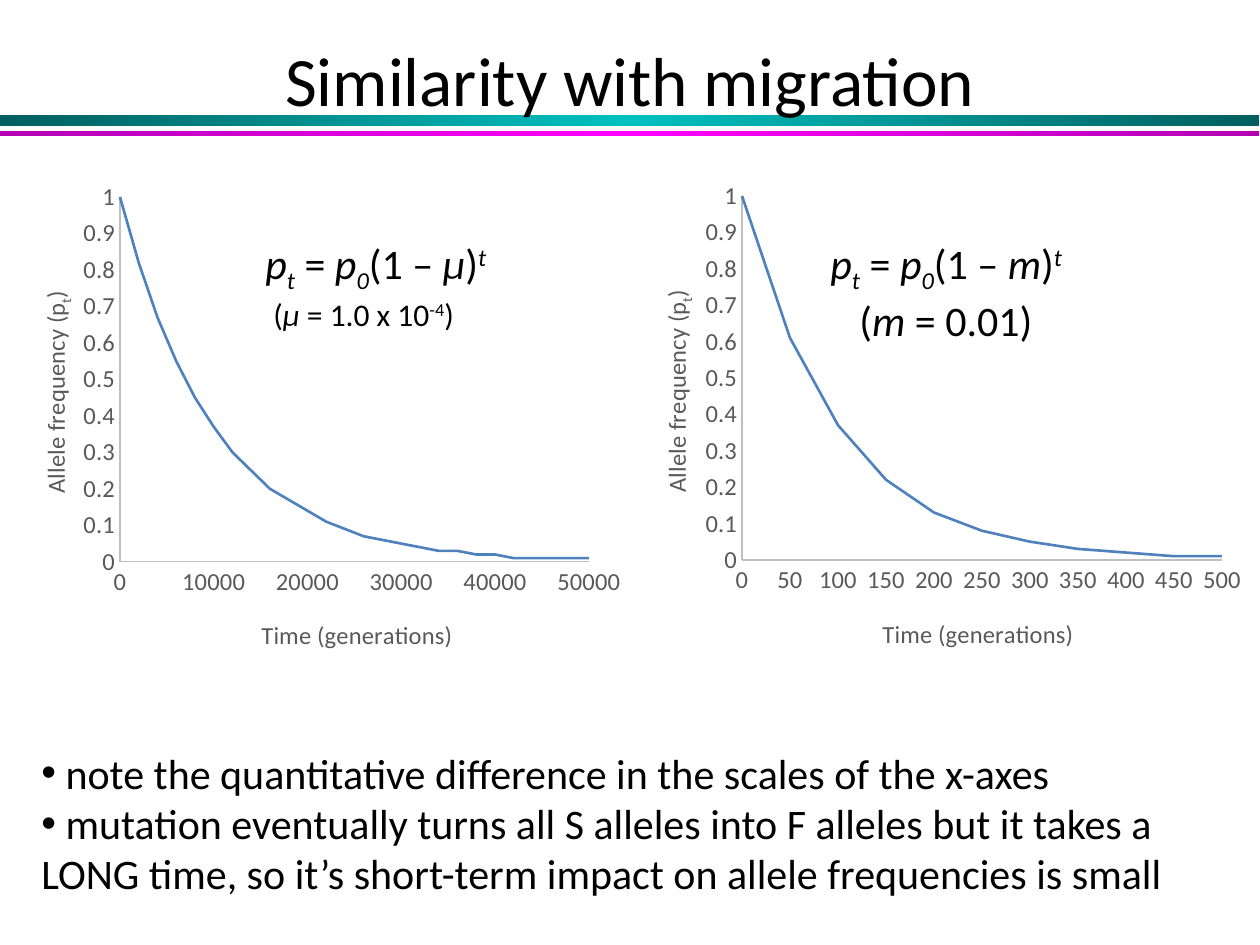
from lxml import etree
from pptx import Presentation
from pptx import util as u
from pptx.chart.data import XyChartData
from pptx.dml.color import RGBColor
from pptx.enum import chart as charts, shapes, text
from pptx.oxml.ns import qn

FONT = "Calibri"
BLACK, GREY, AXIS_GREY, CURVE_BLUE = "000000", "595959", "BFBFBF", "4F81BD"
color = RGBColor.from_string


def px(length):
    """Turn pixels (126 to the inch) into EMU."""
    return u.Emu(round(length * 914400 / 126))


def add_run(paragraph, words, size, hex_color=BLACK, italic=False, baseline=0):
    run = paragraph.add_run()
    run.text = words
    run.font.name = FONT
    run.font.size = u.Pt(size)
    run.font.bold = False
    run.font.italic = italic
    run.font.color.rgb = color(hex_color)
    if baseline:
        run.font._element.set("baseline", str(baseline * 1000))


presentation = Presentation()
presentation.slide_width, presentation.slide_height = px(1260), px(945)
slide = presentation.slides.add_slide(presentation.slide_layouts[5])

# Two bands under the title, brightest in the middle
for top, height, edge, middle in [(115, 11, "005F5F", "00C0C0"), (131, 5, "B200B2", "FF00FF")]:
    band = slide.shapes.add_shape(shapes.MSO_SHAPE.RECTANGLE, 0, px(top), px(1259), px(height))
    band.shadow.inherit = False
    band.line.fill.background()
    band.fill.gradient()
    band.fill.gradient_angle = 0
    stop_list = band.fill._fill._gradFill.find(qn("a:gsLst"))
    for stop in list(stop_list):
        stop_list.remove(stop)
    for position, stop_color in [(0, edge), (50000, middle), (100000, edge)]:
        stop = etree.SubElement(stop_list, qn("a:gs"), pos=str(position))
        etree.SubElement(stop, qn("a:srgbClr"), val=stop_color)

# Title, moved to the front of the bands
title = slide.shapes.title
title.left, title.top, title.width, title.height = px(63), px(38), px(1134), px(81)
title.text_frame.vertical_anchor = text.MSO_ANCHOR.MIDDLE
title.text_frame.paragraphs[0].alignment = text.PP_ALIGN.CENTER
add_run(title.text_frame.paragraphs[0], "Similarity with migration", 39.6)
slide.shapes._spTree.append(title._element)

# Decay charts: left, top, plot box, time step, points, rate, axis maximum, axis unit
chart_width, chart_height = 630, 501
decay_charts = [
    (3, 171, (120, 197, 469, 365), 2000, 27, 0.0001, 50000, 10000),
    (624, 170, (742, 196, 480, 364), 50, 11, 0.01, 500, 50),
]
for left, top, plot_box, step, points, rate, time_max, time_unit in decay_charts:
    data = XyChartData()
    series_data = data.add_series("Series 1")
    for time in range(0, step * points, step):
        series_data.add_data_point(time, round((1 - rate) ** time, 2))
    chart = slide.shapes.add_chart(
        charts.XL_CHART_TYPE.XY_SCATTER_SMOOTH_NO_MARKERS,
        px(left), px(top), px(chart_width), px(chart_height), data).chart
    chart.has_legend = False
    chart.has_title = False
    chart.font.name = FONT
    chart.font.size = u.Pt(14)
    chart.font.color.rgb = color(GREY)
    chart.plots[0].vary_by_categories = False
    curve = chart.plots[0].series[0]
    curve.smooth = True
    curve.marker.style = charts.XL_MARKER_STYLE.NONE
    curve.format.line.color.rgb = color(CURVE_BLUE)
    curve.format.line.width = u.Pt(1.5)

    time_axis, frequency_axis = chart.category_axis, chart.value_axis
    for axis, maximum, unit in [(time_axis, time_max, time_unit), (frequency_axis, 1, 0.1)]:
        axis.minimum_scale, axis.maximum_scale, axis.major_unit = 0, maximum, unit
        axis.has_major_gridlines = False
        axis.major_tick_mark = axis.minor_tick_mark = charts.XL_TICK_MARK.NONE
        axis.format.line.color.rgb = color(AXIS_GREY)
        axis.format.line.width = u.Pt(0.75)
        axis.has_title = True
    add_run(time_axis.axis_title.text_frame.paragraphs[0], "Time (generations)", 14, GREY)
    frequency_frame = frequency_axis.axis_title.text_frame
    frequency_frame._txBody.find(qn("a:bodyPr")).set("rot", "-5400000")
    for words, baseline in [("Allele frequency (p", 0), ("t", -25), (")", 0)]:
        add_run(frequency_frame.paragraphs[0], words, 14, GREY, baseline=baseline)

    plot_left, plot_top, plot_width, plot_height = plot_box
    placements = [
        (chart._chartSpace.chart.plotArea, 0, plot_box),
        (time_axis.axis_title._element, 1, (left + 254, top + 443)),
        (frequency_axis.axis_title._element, 1, (left + 32, top + 116)),
    ]
    for element, index, box in placements:
        for old_layout in element.findall(qn("c:layout")):
            element.remove(old_layout)
        layout = etree.Element(qn("c:layout"))
        element.insert(index, layout)
        manual = etree.SubElement(layout, qn("c:manualLayout"))
        if len(box) == 4:
            etree.SubElement(manual, qn("c:layoutTarget"), val="inner")
        for mode in ("xMode", "yMode"):
            etree.SubElement(manual, qn("c:" + mode), val="edge")
        offsets = (box[0] - left, box[1] - top) + tuple(box[2:])
        sizes = (chart_width, chart_height) * 2
        for name, offset, size in zip("xywh", offsets, sizes):
            etree.SubElement(manual, qn("c:" + name), val=str(round(offset / size, 4)))

# Equations: left, width, height, symbol, second line's indent, size and end
equations = [
    (253, 252, 102, "μ", 8, 18, [(" = 1.0 x 10", False, 0), ("-4", False, 30), (")", False, 0)]),
    (818, 285, 113, "m", 29, 24, [(" = 0.01)", False, 0)]),
]
for left, width, height, symbol, indent, size, ending in equations:
    frame = slide.shapes.add_textbox(px(left), px(231), px(width), px(height)).text_frame
    frame.word_wrap = False
    formula = [("p", True, 0), ("t", True, -25), (" = ", False, 0), ("p", True, 0),
               ("0", True, -25), ("(1 – ", False, 0), (symbol, True, 0),
               (")", False, 0), ("t", True, 30)]
    for words, italic, baseline in formula:
        add_run(frame.paragraphs[0], words, 24, italic=italic, baseline=baseline)
    rate_line = frame.add_paragraph()
    rate_line._p.get_or_add_pPr().set("marL", str(px(indent)))
    for words, italic, baseline in [("(", False, 0), (symbol, True, 0)] + ending:
        add_run(rate_line, words, size, italic=italic, baseline=baseline)

# Notes under the charts
notes = [
    " note the quantitative difference in the scales of the x-axes",
    " mutation eventually turns all S alleles into F alleles but it takes a LONG time, "
    "so it’s short-term impact on allele frequencies is small",
]
frame = slide.shapes.add_textbox(px(29), px(741), px(1212), px(165)).text_frame
frame.word_wrap = True
for number, note in enumerate(notes):
    paragraph = frame.add_paragraph() if number else frame.paragraphs[0]
    properties = paragraph._p.get_or_add_pPr()
    etree.SubElement(properties, qn("a:buFont"), typeface="Arial")
    etree.SubElement(properties, qn("a:buChar"), char="•")
    add_run(paragraph, note, 24)

presentation.save("out.pptx")
